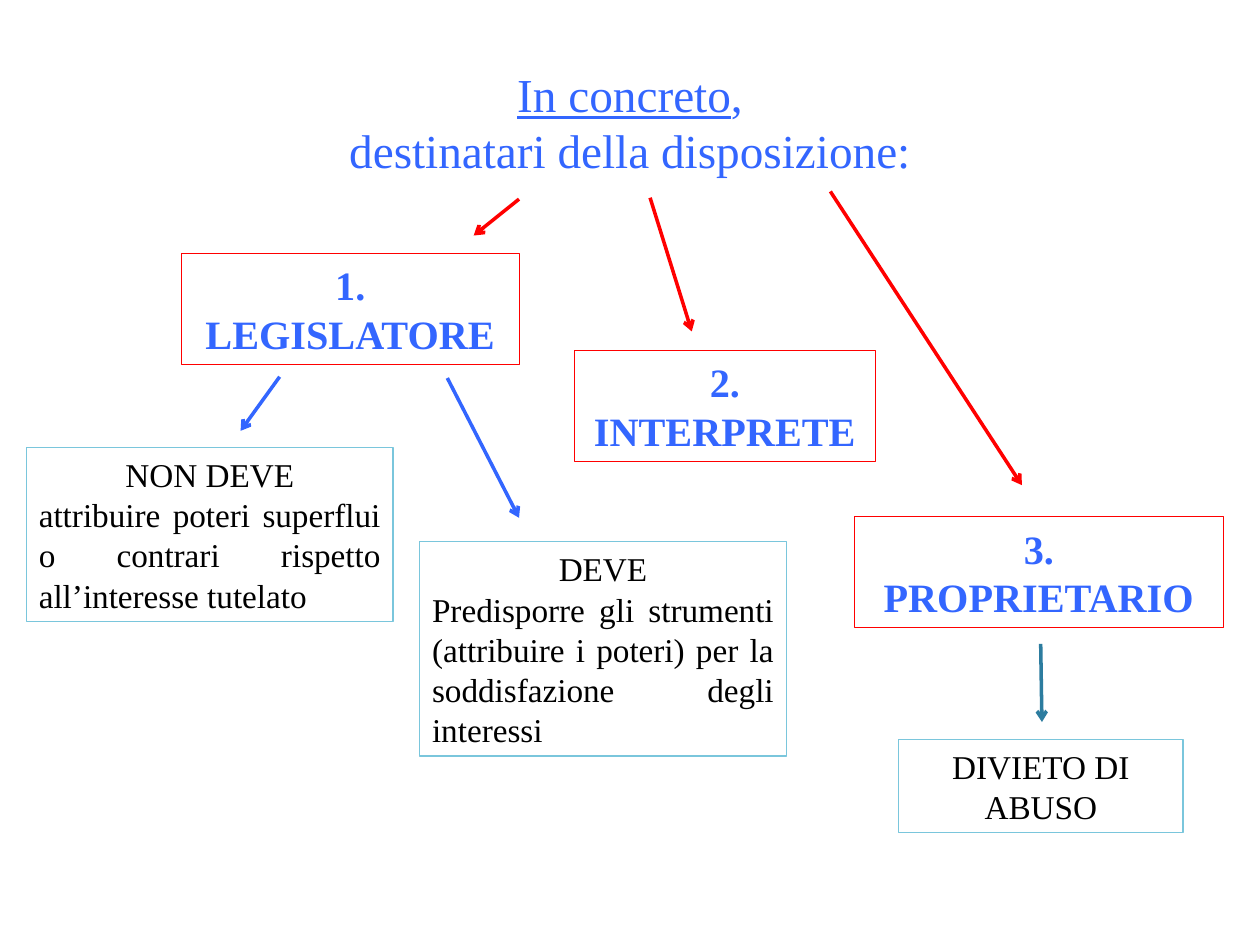
from lxml import etree
from pptx import Presentation
from pptx.dml.color import RGBColor
from pptx.enum.shapes import MSO_CONNECTOR, MSO_SHAPE
from pptx.enum.text import MSO_ANCHOR, MSO_AUTO_SIZE, PP_ALIGN
from pptx.oxml.ns import qn
from pptx.util import Pt

RECTANGLE = MSO_SHAPE.RECTANGLE
STRAIGHT = MSO_CONNECTOR.STRAIGHT
TOP, MIDDLE = MSO_ANCHOR.TOP, MSO_ANCHOR.MIDDLE
NO_FIT, GROW = MSO_AUTO_SIZE.NONE, MSO_AUTO_SIZE.SHAPE_TO_FIT_TEXT
CENTER, JUSTIFY = PP_ALIGN.CENTER, PP_ALIGN.JUSTIFY

BLUE, RED, LIGHT_BLUE, TEAL, BLACK = "3366FF", "FF0000", "7AC6DC", "2C7C9F", "000000"


def color(hex_string):
    return RGBColor.from_string(hex_string)


def add_text(paragraph, text, hex_string, **font_format):
    run = paragraph.add_run()
    run.text = text
    run.font.color.rgb = color(hex_string)
    for name, value in {"name": "Times New Roman", **font_format}.items():
        setattr(run.font, name, value)


presentation = Presentation()
presentation.slide_width, presentation.slide_height = Pt(720), Pt(540)
slide = presentation.slides.add_slide(presentation.slide_layouts[5])

# Heading
title = slide.shapes.title
title.left, title.top, title.width, title.height = Pt(43.2), Pt(31.7), Pt(633.6), Pt(436.3)
frame = title.text_frame
frame_format = {"word_wrap": True, "auto_size": NO_FIT, "vertical_anchor": TOP, "margin_top": Pt(6)}
for name, value in frame_format.items():
    setattr(frame, name, value)
heading_lines = [
    [("In concreto", True), (",", False)],
    [("destinatari della disposizione:", False)],
]
for index, pieces in enumerate(heading_lines):
    paragraph = frame.add_paragraph() if index else frame.paragraphs[0]
    paragraph.alignment = CENTER
    paragraph.line_spacing = Pt(32)
    for text, underline in pieces:
        add_text(paragraph, text, BLUE, size=Pt(27), underline=underline)

# Boxes: the addressees, and the duties that follow for them
addressee = {"line": RED, "text": BLUE, "size": 23, "bold": True, "spacing": 27.6}
duty = {"line": LIGHT_BLUE, "text": BLACK, "size": 19, "bold": False, "spacing": 23}
boxes = [
    (addressee, (103.7, 144.7, 193, 63.4), [("1.", CENTER), ("LEGISLATORE", CENTER)]),
    (addressee, (328.3, 200.2, 172, 63.4), [("2.", CENTER), ("INTERPRETE", CENTER)]),
    (addressee, (488.2, 295.2, 211, 63.4), [("3.", CENTER), ("PROPRIETARIO", CENTER)]),
    (duty, (15.1, 255.6, 209.5, 99.4), [
        ("NON DEVE", CENTER),
        ("attribuire poteri superflui o contrari rispetto all’interesse tutelato", JUSTIFY)]),
    (duty, (239.8, 309.6, 209.5, 122.4), [
        ("DEVE", CENTER),
        ("Predisporre gli strumenti (attribuire i poteri) per la soddisfazione degli interessi",
         JUSTIFY)]),
    (duty, (513.4, 422.6, 162.7, 53.3), [("DIVIETO DI ABUSO", CENTER)]),
]
for style, position, lines in boxes:
    shape = slide.shapes.add_shape(RECTANGLE, *map(Pt, position))
    shape.shadow.inherit = False
    shape.fill.background()
    shape.line.color.rgb = color(style["line"])
    shape.line.width = Pt(0.75)
    frame = shape.text_frame
    for name, value in {"word_wrap": True, "auto_size": GROW, "vertical_anchor": MIDDLE}.items():
        setattr(frame, name, value)
    for index, (text, alignment) in enumerate(lines):
        paragraph = frame.add_paragraph() if index else frame.paragraphs[0]
        paragraph.alignment = alignment
        paragraph.line_spacing = Pt(style["spacing"])
        add_text(paragraph, text, style["text"], size=Pt(style["size"]), bold=style["bold"])

# Arrows: start x, start y, end x, end y
arrows = [
    (RED, (296.6, 113.8, 270.7, 134.6)),
    (RED, (371.5, 113, 395.3, 189.4)),
    (RED, (474.5, 109.4, 583.9, 277.2)),
    (BLUE, (159.8, 215.3, 137.5, 246.2)),
    (BLUE, (255.6, 216, 296.6, 295.9)),
    (TEAL, (594.7, 367.9, 595.4, 412.6)),
]
for line_color, ends in arrows:
    connector = slide.shapes.add_connector(STRAIGHT, *map(Pt, ends))
    connector.line.color.rgb = color(line_color)
    connector.line.width = Pt(2)
    etree.SubElement(connector.line._get_or_add_ln(), qn("a:tailEnd"), type="arrow")
    etree.SubElement(connector._element.spPr, qn("a:effectLst"))

presentation.save("out.pptx")
